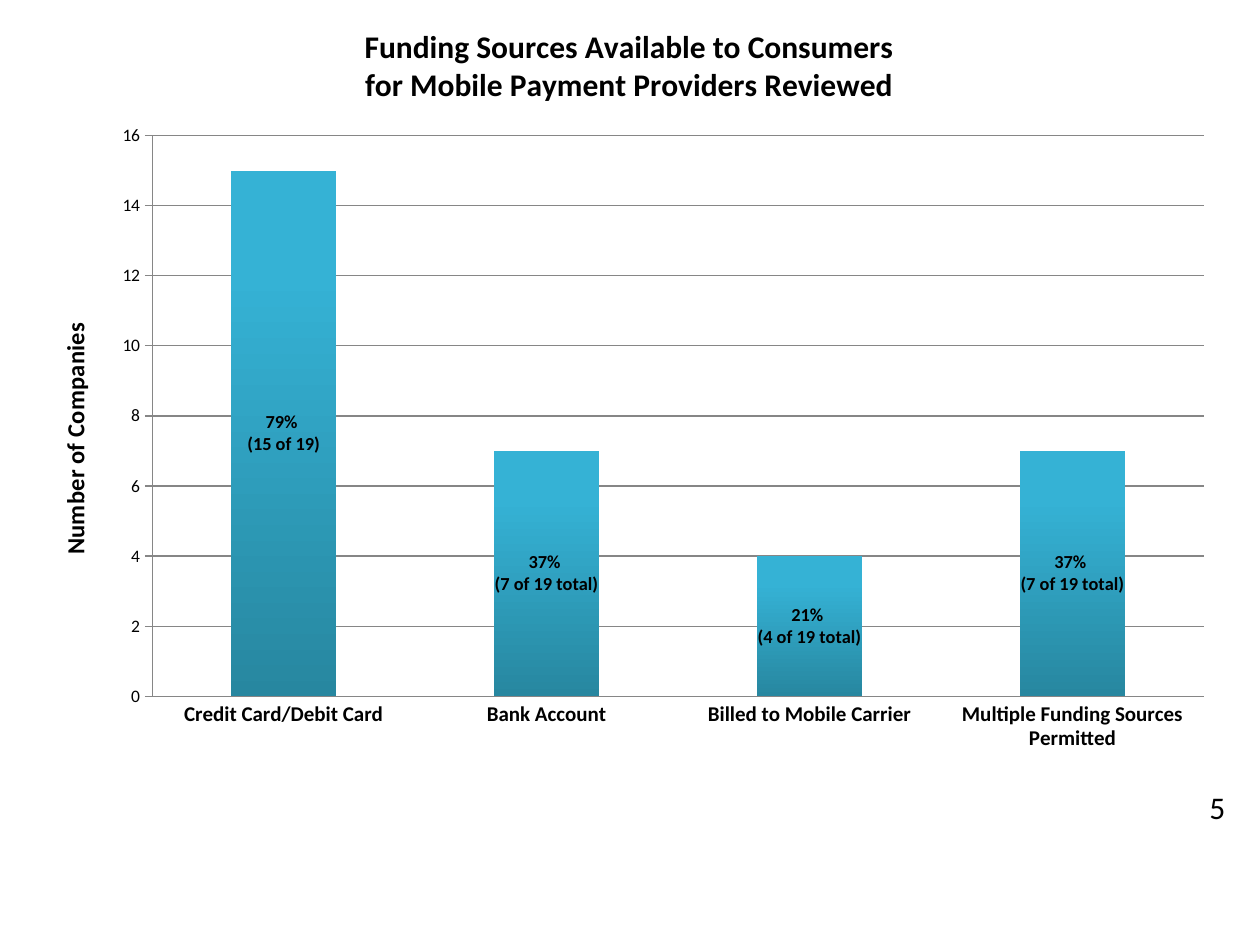
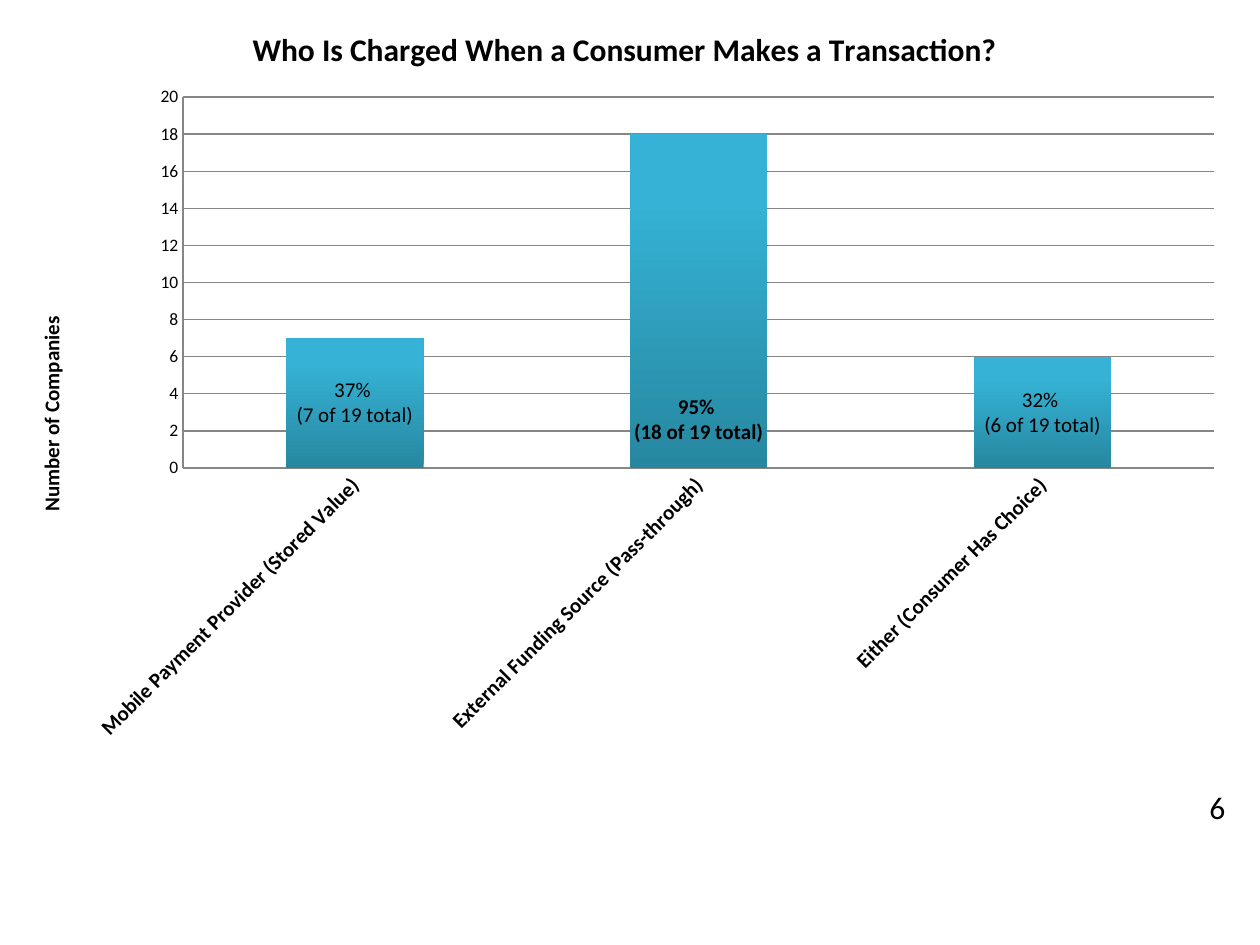
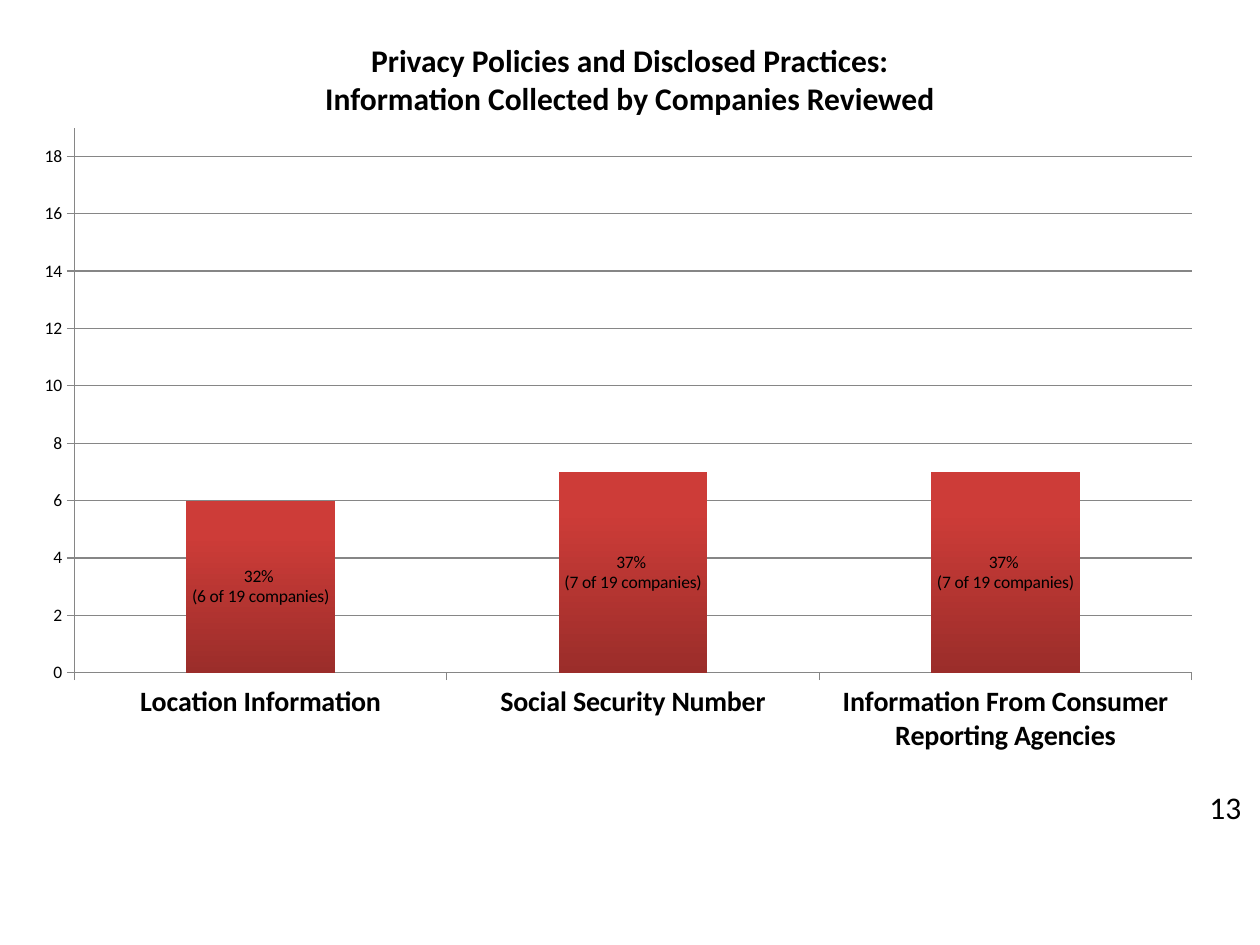
import dataclasses
import typing

import lxml.etree
import pptx
import pptx.chart.axis
import pptx.chart.chart
import pptx.chart.data
import pptx.dml.color
import pptx.enum.chart
import pptx.enum.text
import pptx.oxml.ns
import pptx.slide
import pptx.util

Pt = pptx.util.Pt
RGB = pptx.dml.color.RGBColor
Tick = pptx.enum.chart.XL_TICK_MARK
qn = pptx.oxml.ns.qn


class Shade(typing.NamedTuple):
    low: RGB
    high: RGB


@dataclasses.dataclass(frozen=True)
class Theme:
    font: str = "Calibri"
    ink: RGB = RGB(0, 0, 0)
    rule: RGB = RGB(0x86, 0x86, 0x86)
    blue: Shade = Shade(RGB(0x27, 0x87, 0xA0), RGB(0x35, 0xB2, 0xD5))
    red: Shade = Shade(RGB(0x9B, 0x2D, 0x2A), RGB(0xCD, 0x3C, 0x38))
    head: float = 18
    body: float = 10


THEME = Theme()


class Box(typing.NamedTuple):
    """Left, top, width and height in points."""
    x: float
    y: float
    w: float
    h: float


class Bar(typing.NamedTuple):
    name: str
    value: int
    label: str
    bold: bool = False
    drop: float = 0  # label shift down, in points


class Side(typing.NamedTuple):
    """Title of the value axis, with its top left corner on the slide."""
    text: str
    size: float
    x: float
    y: float


@dataclasses.dataclass(frozen=True)
class Page:
    number: int
    title: str
    frame: Box
    plot: Box
    bars: list[Bar]
    top: int
    shade: Shade
    names: float
    label: float = THEME.body
    side: Side | None = None
    tilt: int = 0
    marks: tuple[Tick, Tick] = (Tick.NONE, Tick.OUTSIDE)
    own: bool = False  # title stands on the slide, not in the chart


HEAD = Box(36, 12, 648, 66)
FOOT = Box(684, 446.5, 36, 29)

PAGES = [
    Page(5, "Funding Sources Available to Consumers\nfor Mobile Payment Providers Reviewed",
         Box(18, 0, 683, 438), Box(87, 77.5, 601, 320.5),
         [Bar("Credit Card/Debit Card", 15, "79% \n(15 of 19)", True),
          Bar("Bank Account", 7, "37% \n(7 of 19 total)", True),
          Bar("Billed to Mobile Carrier", 4, "21% \n(4 of 19 total)", True),
          Bar("Multiple Funding Sources Permitted", 7, "37% \n(7 of 19 total)", True)],
         top=16, shade=THEME.blue, names=12, label=10.5,
         side=Side("Number of Companies", 14, 30.5, 182)),
    Page(6, "Who Is Charged When a Consumer Makes a Transaction?",
         Box(6, 0, 702, 432), Box(104.5, 55.5, 589.5, 212),
         [Bar("Mobile Payment Provider (Stored Value)", 7, "37% \n(7 of 19 total)"),
          Bar("External Funding Source (Pass-through)", 18, "95% \n(18 of 19 total)", True, 68),
          Bar("Either (Consumer Has Choice)", 6, "32% \n(6 of 19 total)")],
         top=20, shade=THEME.blue, names=12, label=12,
         side=Side("Number of Companies", 12, 19, 178.5),
         tilt=-45, marks=(Tick.NONE, Tick.NONE)),
    Page(13, "Privacy Policies and Disclosed Practices:\vInformation Collected by Companies Reviewed",
         Box(12, 66, 683, 372), Box(42.5, 73, 638.5, 311.5),
         [Bar("Location Information", 6, "32% \n(6 of 19 companies)"),
          Bar("Social Security Number", 7, "37% \n(7 of 19 companies)"),
          Bar("Information From Consumer Reporting Agencies", 7, "37% \n(7 of 19 companies)")],
         top=19, shade=THEME.red, names=16,
         marks=(Tick.OUTSIDE, Tick.OUTSIDE), own=True),
]


def style(font: typing.Any, size: float, bold: bool = False) -> None:
    font.name = THEME.font
    font.size = Pt(size)
    font.bold = bold
    font.color.rgb = THEME.ink


def fill(frame: typing.Any, text: str, size: float, bold: bool = False) -> None:
    """Set the text of a frame and format all its runs."""
    frame.text = text
    for para in frame.paragraphs:
        for run in para.runs:
            style(run.font, size, bold)


def place(host: typing.Any, spot: int, modes: dict[str, str], **parts: float) -> None:
    """Give a chart part a manual layout, as shares of the chart frame."""
    for old in host.findall(qn("c:layout")):
        host.remove(old)
    outer = lxml.etree.Element(qn("c:layout"))
    inner = lxml.etree.SubElement(outer, qn("c:manualLayout"))
    for key, val in {**modes, **parts}.items():
        lxml.etree.SubElement(inner, qn("c:" + key), val=str(val))
    host.insert(spot, outer)


def turn(body: typing.Any, angle: int) -> None:
    body.set("rot", str(angle * 60000))
    body.set("vert", "horz")


def set_axis(axis: pptx.chart.axis._BaseAxis, mark: Tick, size: float, bold: bool) -> None:
    axis.major_tick_mark = mark
    axis.minor_tick_mark = Tick.NONE
    axis.format.line.color.rgb = THEME.rule
    axis.format.line.width = Pt(0.75)
    style(axis.tick_labels.font, size, bold)


def set_side(axis: pptx.chart.axis.ValueAxis, side: Side, frame: Box) -> None:
    title = axis.axis_title
    fill(title.text_frame, side.text, side.size, True)
    turn(title.text_frame._txBody.bodyPr, -90)
    place(title._element, 1, {"xMode": "edge", "yMode": "edge"},
          x=(side.x - frame.x) / frame.w, y=(side.y - frame.y) / frame.h)


def set_bars(chart: pptx.chart.chart.Chart, page: Page) -> None:
    plot = chart.plots[0]
    plot.gap_width = 150
    plot.vary_by_categories = False
    row = plot.series[0]
    paint = row.format.fill
    paint.gradient()
    paint.gradient_angle = 90
    low, high = paint.gradient_stops
    low.color.rgb, high.color.rgb = page.shade
    high.position = 0.8
    for spot, bar in enumerate(page.bars):
        label = row.points[spot].data_label
        fill(label.text_frame, bar.label, page.label, bar.bold)
        label.position = pptx.enum.chart.XL_LABEL_POSITION.CENTER
        if bar.drop:
            host = label.text_frame._txBody.getparent().getparent()
            place(host, 1, {}, x=0, y=bar.drop / page.frame.h)
    for lead in row._element.xpath("c:dLbls/c:showLeaderLines"):
        lead.set("val", "0")


def add_chart(slide: pptx.slide.Slide, page: Page) -> None:
    data = pptx.chart.data.CategoryChartData()
    data.categories = [bar.name for bar in page.bars]
    data.add_series("Series 1", [bar.value for bar in page.bars])
    frame, area = page.frame, page.plot
    chart = slide.shapes.add_chart(
        pptx.enum.chart.XL_CHART_TYPE.COLUMN_CLUSTERED, *map(Pt, frame), data).chart
    style(chart.font, THEME.body)
    chart.has_legend = False
    chart.has_title = not page.own
    if not page.own:
        fill(chart.chart_title.text_frame, page.title, THEME.head, True)
        chart.chart_title.include_in_layout = False

    base, scale = chart.category_axis, chart.value_axis
    set_axis(base, page.marks[0], page.names, True)
    turn(base._element.xpath("c:txPr/a:bodyPr")[0], page.tilt)
    set_axis(scale, page.marks[1], THEME.body, False)
    scale.minimum_scale, scale.maximum_scale, scale.major_unit = 0, page.top, 2
    grid = scale.major_gridlines.format.line
    grid.color.rgb = THEME.rule
    grid.width = Pt(0.75)
    if page.side:
        set_side(scale, page.side, frame)

    set_bars(chart, page)
    place(chart._chartSpace.chart.plotArea, 0,
          {"layoutTarget": "inner", "xMode": "edge", "yMode": "edge"},
          x=(area.x - frame.x) / frame.w, y=(area.y - frame.y) / frame.h,
          w=area.w / frame.w, h=area.h / frame.h)


def add_head(slide: pptx.slide.Slide, text: str) -> None:
    head = slide.shapes.title
    head.left, head.top, head.width, head.height = map(Pt, HEAD)
    fill(head.text_frame, text, THEME.head, True)
    head.text_frame.vertical_anchor = pptx.enum.text.MSO_ANCHOR.MIDDLE
    head.text_frame.paragraphs[0].alignment = pptx.enum.text.PP_ALIGN.CENTER


def add_foot(slide: pptx.slide.Slide, number: int) -> None:
    frame = slide.shapes.add_textbox(*map(Pt, FOOT)).text_frame
    frame.word_wrap = False
    fill(frame, str(number), THEME.head)


def main() -> None:
    deck = pptx.Presentation()
    deck.slide_width, deck.slide_height = Pt(720), Pt(540)
    plain = deck.slide_layouts.get_by_name("Blank")
    titled = deck.slide_layouts.get_by_name("Title Only")
    for page in PAGES:
        slide = deck.slides.add_slide(titled if page.own else plain)
        add_foot(slide, page.number)
        if page.own:
            add_head(slide, page.title)
        add_chart(slide, page)
    deck.save("out.pptx")


if __name__ == "__main__":
    main()
